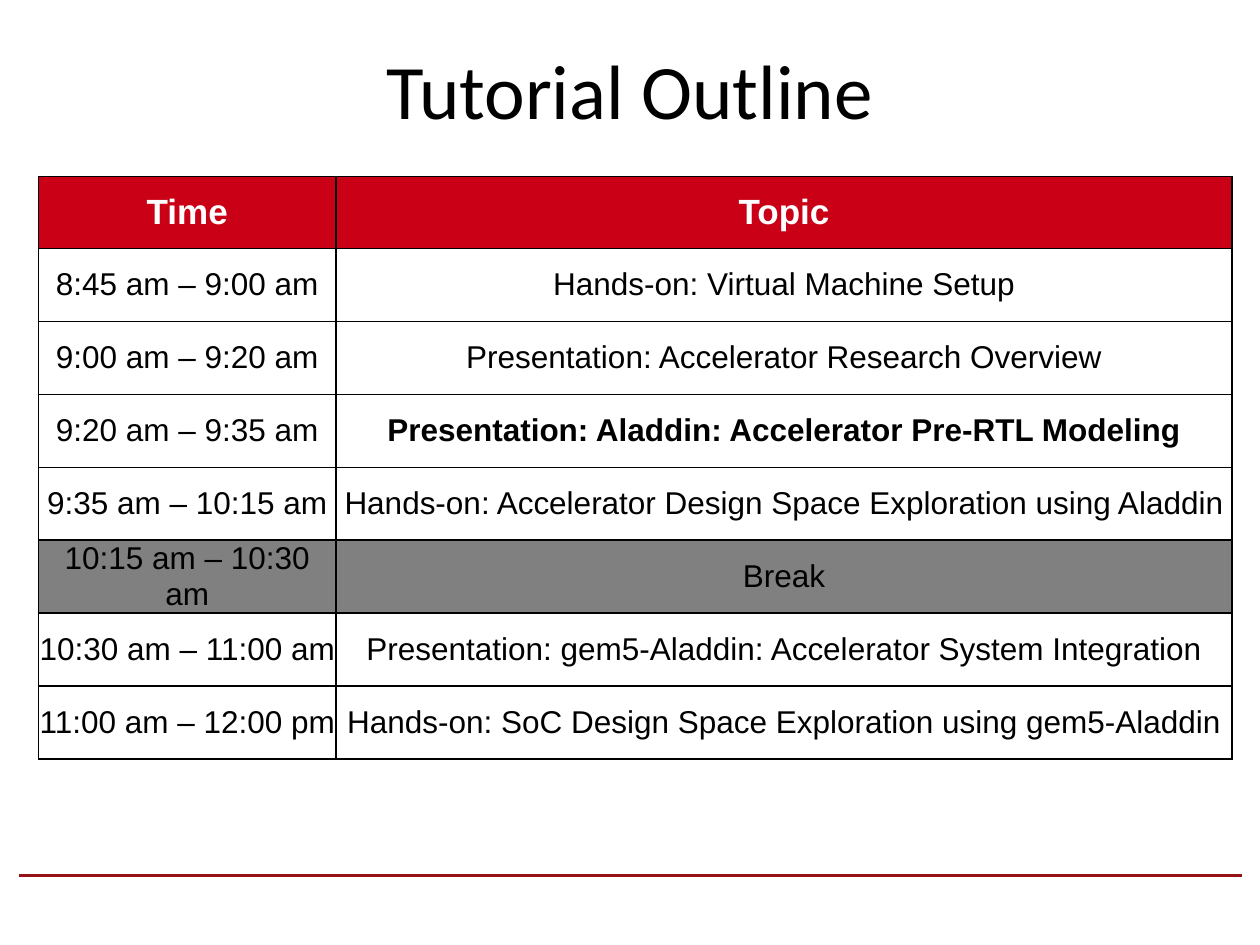
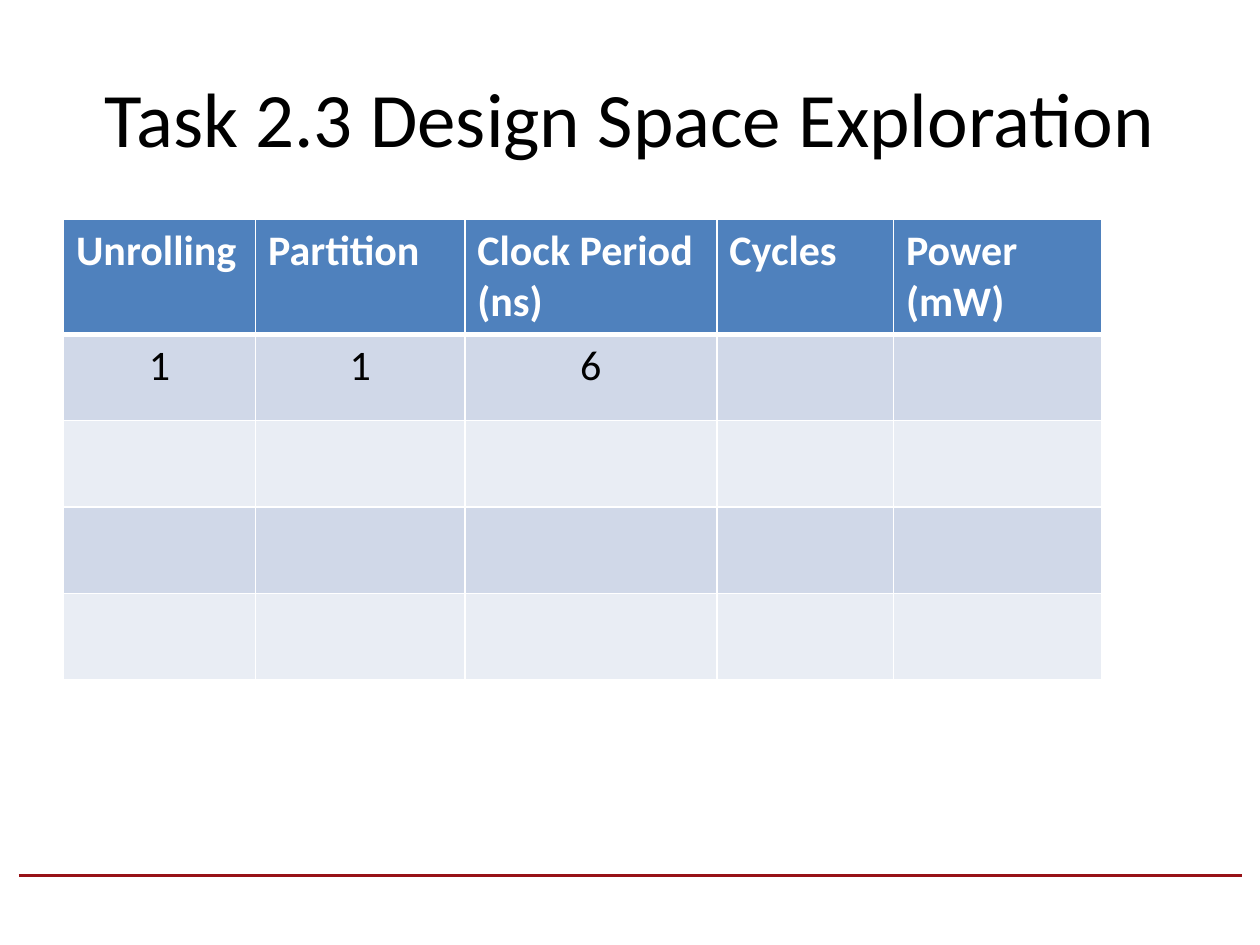
from lxml.etree import SubElement
from pptx import Presentation
from pptx.dml.color import RGBColor
from pptx.enum.shapes import MSO_CONNECTOR
from pptx.enum.text import MSO_ANCHOR, PP_ALIGN
from pptx.oxml.ns import qn
from pptx.util import Cm, Pt

COLORS = {
    "black": "000000",
    "white": "FFFFFF",
    "rule": "971217",
    "red": "C90016",
    "grey": "808080",
    "blue": "4F81BD",
    "band_dark": "D0D8E8",
    "band_light": "E9EDF4",
}

TITLE_FONT = {"name": "Calibri", "size": Pt(44), "bold": False}
AGENDA_HEADER = {"name": "Arial", "size": Pt(20), "bold": True}
AGENDA_BODY = {"name": "Arial", "size": Pt(18), "bold": False}
RESULTS_HEADER = {"name": "Calibri", "size": Pt(24), "bold": True}
RESULTS_BODY = {"name": "Calibri", "size": Pt(24), "bold": False}

NO_MARGINS = {f"margin_{side}": 0 for side in ("left", "top", "right", "bottom")}

AGENDA = [
    ("Time", "Topic"),
    ("8:45 am – 9:00 am", "Hands-on: Virtual Machine Setup"),
    ("9:00 am – 9:20 am", "Presentation: Accelerator Research Overview"),
    ("9:20 am – 9:35 am", "Presentation: Aladdin: Accelerator Pre-RTL Modeling"),
    ("9:35 am – 10:15 am", "Hands-on: Accelerator Design Space Exploration using Aladdin"),
    ("10:15 am – 10:30 am", "Break"),
    ("10:30 am – 11:00 am", "Presentation: gem5-Aladdin: Accelerator System Integration"),
    ("11:00 am – 12:00 pm", "Hands-on: SoC Design Space Exploration using gem5-Aladdin"),
]
CURRENT_ROW = 3
BREAK_ROW = 5

RESULTS = [
    ("Unrolling", "Partition", "Clock Period (ns)", "Cycles", "Power (mW)"),
    ("1", "1", "6", "", ""),
    *[("",) * 5] * 3,
]


def rgb(color):
    return RGBColor.from_string(COLORS[color])


def set_all(target, values):
    for name, value in values.items():
        setattr(target, name, value)


def add_page(deck, title, title_top):
    page = deck.slides.add_slide(deck.slide_layouts[5])
    rule = page.shapes.add_connector(
        MSO_CONNECTOR.STRAIGHT, Cm(0.38), Cm(17.65), Cm(25.04), Cm(17.65)
    )
    rule.line.color.rgb = rgb("rule")
    rule.line.width = Pt(2)
    SubElement(rule._element.spPr, qn("a:effectLst"))

    box = page.shapes.title
    set_all(box, {"left": Cm(1.27), "top": title_top, "width": Cm(22.86), "height": Cm(3.18)})
    box.text_frame.text = title
    box.text_frame.vertical_anchor = MSO_ANCHOR.MIDDLE
    paragraph = box.text_frame.paragraphs[0]
    paragraph.alignment = PP_ALIGN.CENTER
    set_all(paragraph.font, TITLE_FONT)
    paragraph.font.color.rgb = rgb("black")
    return page


def add_grid(page, left, top, widths, heights):
    table = page.shapes.add_table(
        len(heights), len(widths), left, top, sum(widths), sum(heights)
    ).table
    set_all(table, {"first_row": False, "horz_banding": False})
    for column, width in zip(table.columns, widths):
        column.width = width
    for row, height in zip(table.rows, heights):
        row.height = height
    return table


def set_borders(cell, color, top=1, bottom=1):
    properties = cell._tc.get_or_add_tcPr()
    for side, width in {"L": 1, "R": 1, "T": top, "B": bottom}.items():
        line = SubElement(properties, qn(f"a:ln{side}"), w=str(Pt(width)))
        SubElement(SubElement(line, qn("a:solidFill")), qn("a:srgbClr"), val=COLORS[color])


def set_fill(cell, color):
    if color is None:
        cell.fill.background()
    else:
        cell.fill.solid()
        cell.fill.fore_color.rgb = rgb(color)


def write_cell(cell, text, font, color, alignment):
    cell.text = text
    paragraph = cell.text_frame.paragraphs[0]
    paragraph.alignment = alignment
    set_all(paragraph.font, font)
    paragraph.font.color.rgb = rgb(color)


def add_agenda(page):
    heights = [Cm(1.45)] + [Cm(1.47)] * (len(AGENDA) - 1)
    table = add_grid(page, Cm(0.78), Cm(3.56), [Cm(5.99), Cm(18.07)], heights)
    fills = {0: "red", BREAK_ROW: "grey"}
    for row, texts in enumerate(AGENDA):
        for column, text in enumerate(texts):
            cell = table.cell(row, column)
            set_borders(cell, "black")
            set_fill(cell, fills.get(row))
            cell.vertical_anchor = MSO_ANCHOR.MIDDLE
            if row == 0:
                write_cell(cell, text, AGENDA_HEADER, "white", PP_ALIGN.CENTER)
            else:
                set_all(cell, NO_MARGINS)
                current = (row, column) == (CURRENT_ROW, 1)
                font = {**AGENDA_BODY, "bold": current}
                write_cell(cell, text, font, "black", PP_ALIGN.CENTER)


def add_results(page):
    widths = [Cm(width) for width in (3.87, 4.22, 5.08, 3.56, 4.19)]
    heights = [Cm(2.29)] + [Cm(1.74)] * (len(RESULTS) - 1)
    table = add_grid(page, Cm(1.28), Cm(4.42), widths, heights)
    for row, texts in enumerate(RESULTS):
        for column, text in enumerate(texts):
            cell = table.cell(row, column)
            set_borders(cell, "white", 3 if row == 1 else 1, 3 if row == 0 else 1)
            if row == 0:
                set_fill(cell, "blue")
                write_cell(cell, text, RESULTS_HEADER, "white", PP_ALIGN.LEFT)
            else:
                set_fill(cell, "band_dark" if row % 2 else "band_light")
                write_cell(cell, text, RESULTS_BODY, "black", PP_ALIGN.CENTER)


def main():
    deck = Presentation()
    set_all(deck, {"slide_width": Cm(25.4), "slide_height": Cm(19.05)})
    add_agenda(add_page(deck, "Tutorial Outline", Cm(0.2)))
    add_results(add_page(deck, "Task 2.3 Design Space Exploration", Cm(0.76)))
    deck.save("out.pptx")


if __name__ == "__main__":
    main()
